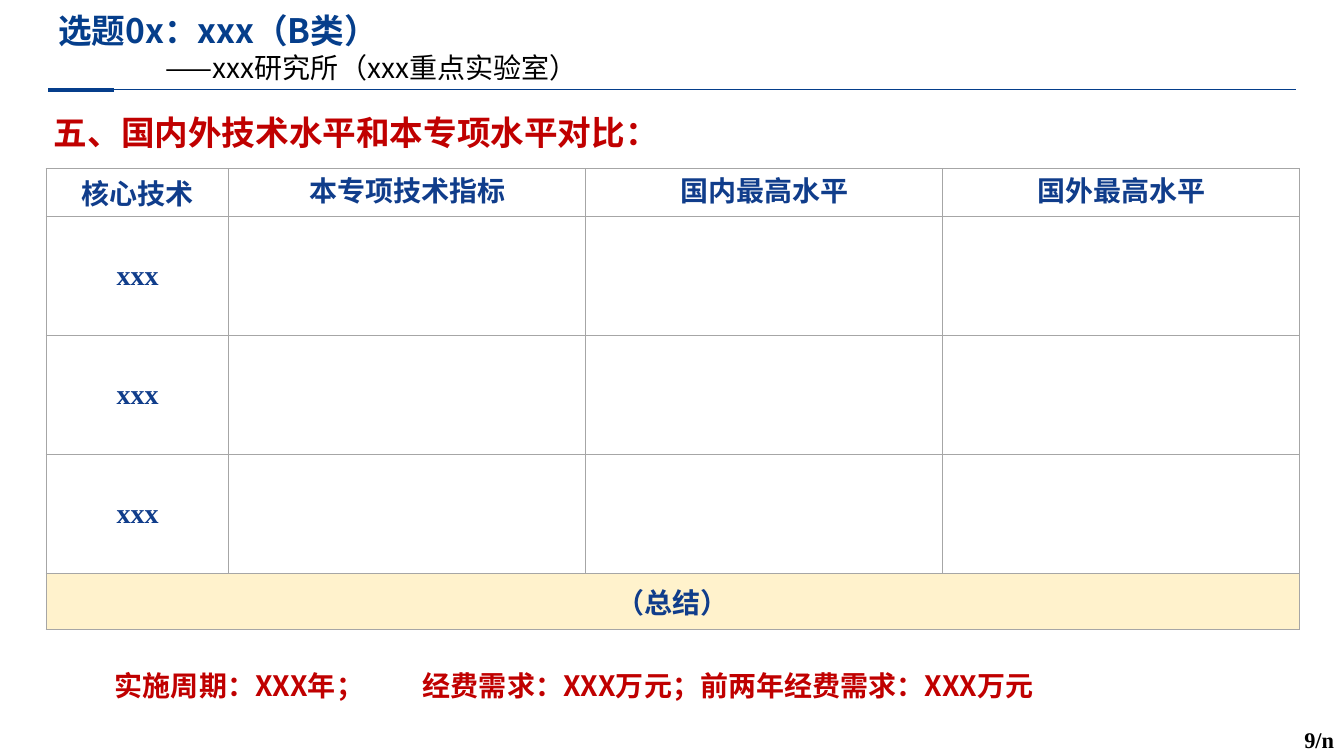
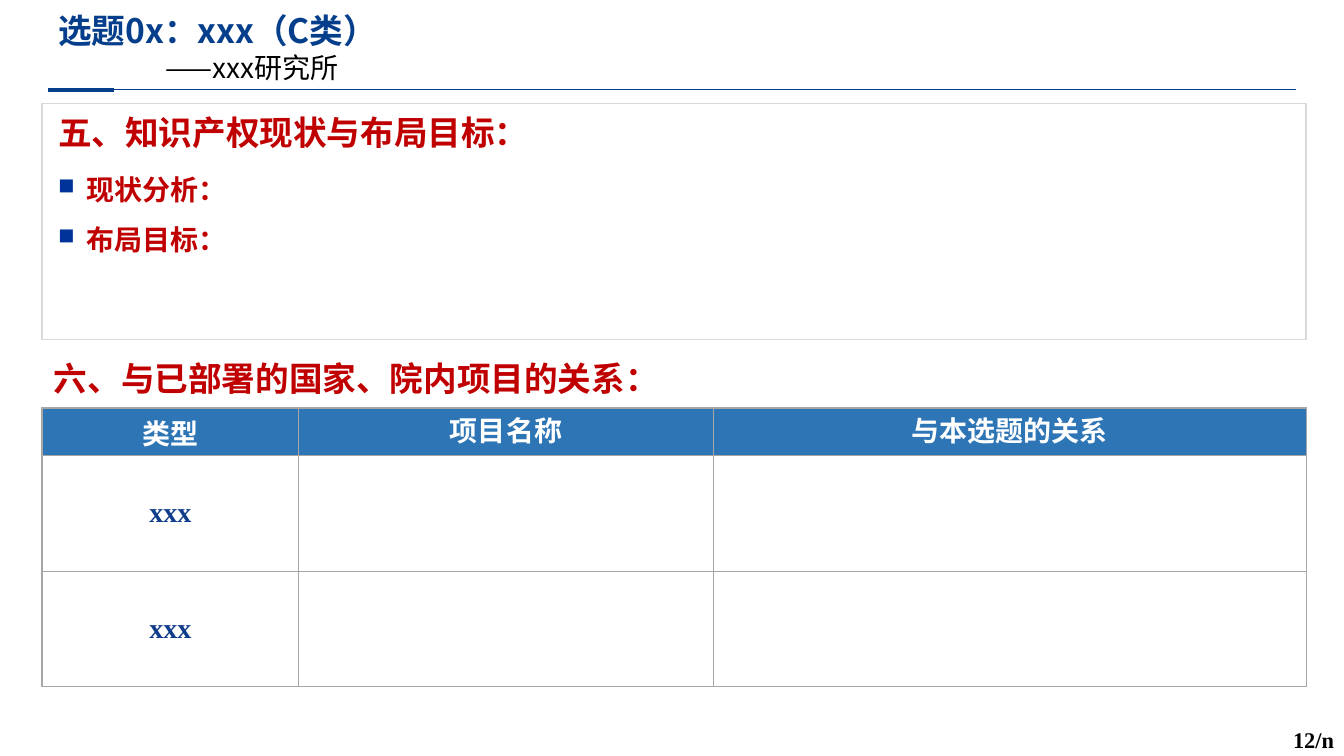
from dataclasses import dataclass
from lxml.etree import SubElement as Sub, Element
from pptx import Presentation
from pptx.dml.color import RGBColor as Rgb
from pptx.enum.lang import MSO_LANGUAGE_ID as Lang
from pptx.enum.shapes import MSO_CONNECTOR as Link, MSO_SHAPE as Form
from pptx.enum.text import MSO_ANCHOR as Anchor, PP_ALIGN as Align
from pptx.oxml.ns import qn
from pptx.util import Pt


@dataclass(frozen=True)
class Theme:
    navy: str = "053E8B"
    ink: str = "103D8B"
    red: str = "C00000"
    blue: str = "2E75B6"
    mark: str = "003399"
    cream: str = "FFF2CC"
    grid: str = "A6A6A6"
    edge: str = "D9D9D9"
    white: str = "FFFFFF"
    black: str = "000000"
    sans: str = "Noto Sans CJK SC"
    serif: str = "Times New Roman"
    head: int = 24
    body: int = 20
    foot: int = 16


T = Theme()


def put(item, **vals):
    for key, val in vals.items():
        setattr(item, key, val)


def write(para, text, color, size=T.body, face=T.sans, bold=True, **form):
    put(para, **form)
    run = para.add_run()
    run.text = text
    put(run.font, name=face, size=Pt(size), bold=bold,
        language_id=Lang.SIMPLIFIED_CHINESE)
    run.font.color.rgb = Rgb.from_string(color)
    Sub(run.font._element, qn("a:ea"), typeface=face)


def frame(slide, box, anchor=Anchor.TOP):
    area = slide.shapes.add_textbox(*map(Pt, box)).text_frame
    put(area, word_wrap=True, vertical_anchor=anchor)
    return area


def indent(para, left, first=0):
    props = para._p.get_or_add_pPr()
    props.set("marL", str(Pt(left)))
    props.set("indent", str(Pt(first)))
    return props


def rule(slide, left, right, y, width):
    line = slide.shapes.add_connector(
        Link.STRAIGHT, Pt(left), Pt(y), Pt(right), Pt(y))
    put(line.line, width=Pt(width))
    line.line.color.rgb = Rgb.from_string(T.navy)
    Sub(line._element.spPr, qn("a:effectLst"))


def header(slide, box, title, unit):
    x, y, w, h = box
    rule(slide, x + 17, x + w, y + h, 0.5)
    rule(slide, x, x + 47, y + h, 3)
    area = frame(slide, box)
    write(area.paragraphs[0], title, T.navy, T.head)
    para = area.add_paragraph()
    indent(para, 77)
    write(para, unit, T.black, bold=False)


def number(slide, box, text):
    write(frame(slide, box).paragraphs[0], text, T.black, T.foot,
          T.serif, alignment=Align.RIGHT)


def heading(slide, box, text, space=1.25):
    write(frame(slide, box, Anchor.MIDDLE).paragraphs[0], text, T.red,
          T.head, line_spacing=space)


def panel(slide, box, title, items):
    x, y, w, h = box
    rect = slide.shapes.add_shape(Form.RECTANGLE, *map(Pt, box))
    rect.shadow.inherit = False
    rect.fill.solid()
    rect.fill.fore_color.rgb = Rgb.from_string(T.white)
    rect.line.color.rgb = Rgb.from_string(T.edge)
    rect.line.width = Pt(1)
    heading(slide, (x + 4.5, y + 2, 360, 36), title, 1.0)
    area = frame(slide, (x + 4.5, y + 43, w - 7, 70), Anchor.MIDDLE)
    for at, item in enumerate(items):
        para = area.add_paragraph() if at else area.paragraphs[0]
        put(para, line_spacing=1.1, space_after=Pt(9))
        props = indent(para, 20, -20)
        Sub(Sub(props, qn("a:buClr")), qn("a:srgbClr"), val=T.mark)
        Sub(props, qn("a:buSzPct"), val="80000")
        Sub(props, qn("a:buChar"), char="■")
        write(para, item, T.red)


def paint(cell, fill):
    put(cell, margin_left=Pt(5), margin_right=Pt(5), margin_top=0,
        margin_bottom=0, vertical_anchor=Anchor.MIDDLE)
    if fill:
        cell.fill.solid()
        cell.fill.fore_color.rgb = Rgb.from_string(fill)
    else:
        cell.fill.background()
    props = cell._tc.get_or_add_tcPr()
    for at, side in enumerate("LRTB"):
        line = Element(qn("a:ln" + side), w=str(Pt(1)))
        Sub(Sub(line, qn("a:solidFill")), qn("a:srgbClr"), val=T.grid)
        props.insert(at, line)


def matrix(slide, box, cols, rows, names, color, fill=None, total=None):
    grid = slide.shapes.add_table(
        len(rows), len(cols), *map(Pt, box)).table
    put(grid, first_row=False, horz_banding=False)
    for col, width in zip(grid.columns, cols):
        col.width = Pt(width)
    for row, height in zip(grid.rows, rows):
        row.height = Pt(height)
    last = len(rows) - 1
    for r, row in enumerate(grid.rows):
        end = total and r == last
        for c, cell in enumerate(row.cells):
            paint(cell, T.cream if end else None if r else fill)
            para = cell.text_frame.paragraphs[0]
            para.alignment = Align.CENTER
            if r == 0:
                write(para, names[c], color,
                      line_spacing=Pt(25) if c else None)
            elif c == 0 and not end:
                write(para, "xxx", T.ink, face=T.serif)
    if total:
        cell = grid.cell(last, 0)
        cell.merge(grid.cell(last, len(cols) - 1))
        write(cell.text_frame.paragraphs[0], total, T.ink)


def budget(slide, box, text):
    para = frame(slide, box).paragraphs[0]
    tabs = Sub(para._p.get_or_add_pPr(), qn("a:tabLst"))
    Sub(tabs, qn("a:tab"), pos=str(Pt(220)), algn="l")
    write(para, text, T.red)


def start(deck, title, unit, page):
    slide = deck.slides.add_slide(deck.slide_layouts[6])
    header(slide, (34.5, 3.6, 891.5, 60.5), title, unit)
    number(slide, (907, 515, 53, 32), page)
    return slide


def compare(deck):
    slide = start(deck, "选题0x：xxx（B类）",
                  "——xxx研究所（xxx重点实验室）", "9/n")
    heading(slide, (31.5, 70.5, 848, 40), "五、国内外技术水平和本专项水平对比：")
    wide, first = 895.5, 130.5
    cols = [first] + [(wide - first) / 3] * 3
    matrix(slide, (33, 120.5, wide, 329), cols, [34, 85, 85, 85, 40],
           ["核心技术", "本专项技术指标", "国内最高水平", "国外最高水平"],
           T.ink, total="（总结）")
    budget(slide, (75, 474, 754.5, 31.5),
           "实施周期：XXX年；\t经费需求：XXX万元；前两年经费需求：XXX万元")


def relate(deck):
    slide = start(deck, "选题0x：xxx（C类）", "——xxx研究所", "12/n")
    panel(slide, (30, 74, 903, 168.5), "五、知识产权现状与布局目标：",
          ["现状分析：", "布局目标："])
    heading(slide, (31.5, 246.5, 848, 40), "六、与已部署的国家、院内项目的关系：")
    matrix(slide, (30, 291.5, 903, 199), [183.5, 296, 423.5],
           [34, 82.5, 82.5], ["类型", "项目名称", "与本选题的关系"],
           T.white, T.blue)


def main():
    deck = Presentation()
    put(deck, slide_width=Pt(960), slide_height=Pt(540))
    compare(deck)
    relate(deck)
    deck.save("out.pptx")


if __name__ == "__main__":
    main()
